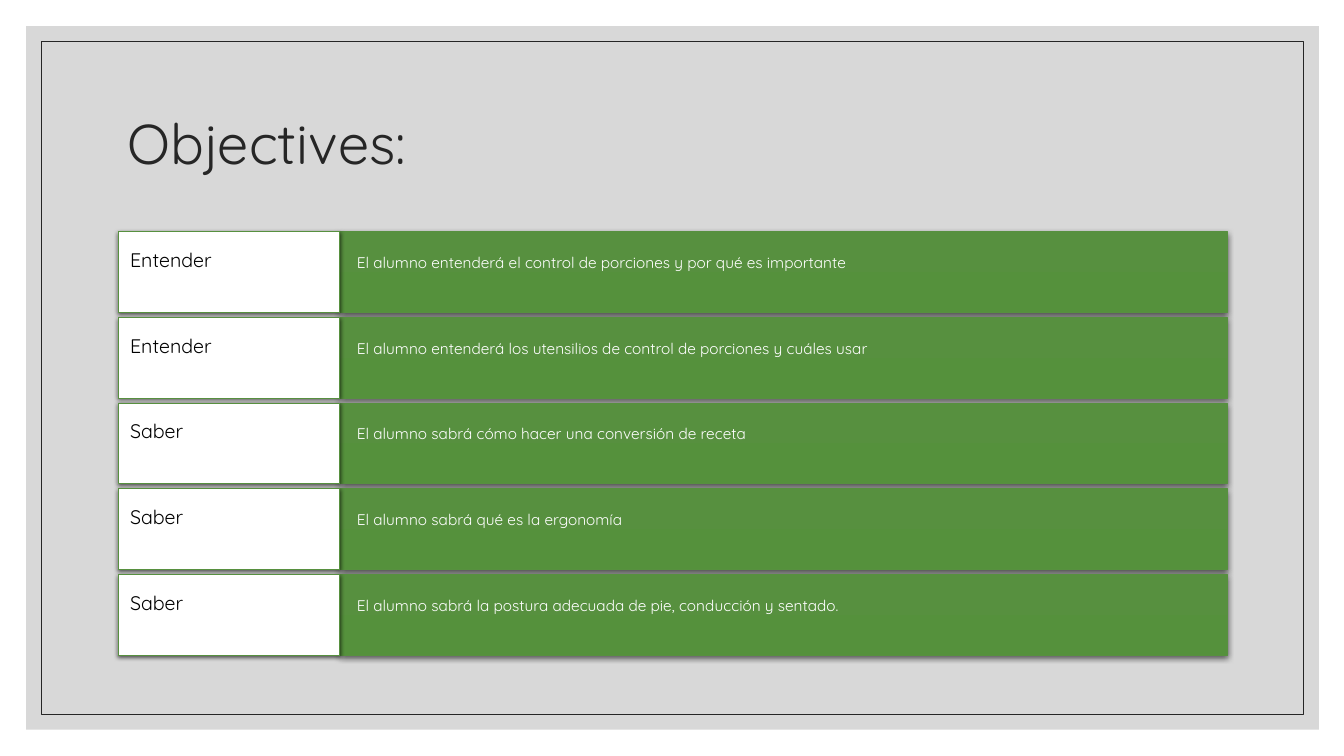
from lxml import etree
from pptx import Presentation
from pptx.dml.color import RGBColor
from pptx.enum import shapes, text
from pptx.oxml import ns
from pptx.util import Inches, Pt

COLORS = {
    "panel": "BFBFBF", "ink": "262626", "white": "FFFFFF", "black": "000000",
    "green": "57903F", "green_end": "55913C",
}
FONT = "Quicksand"
OBJECTIVES = [
    ("Entender", "El alumno entenderá el control de porciones y por qué es importante"),
    ("Entender", "El alumno entenderá los utensilios de control de porciones y cuáles usar"),
    ("Saber", "El alumno sabrá cómo hacer una conversión de receta"),
    ("Saber", "El alumno sabrá qué es la ergonomía"),
    ("Saber", "El alumno sabrá la postura adecuada de pie, conducción y sentado."),
]


def add_rectangle(left, top, width, height, fill=None, line=None, shadow=None):
    shape = slide.shapes.add_shape(
        shapes.MSO_SHAPE.RECTANGLE, *map(Inches, (left, top, width, height)))
    shape.shadow.inherit = False
    if fill:
        shape.fill.solid()
        shape.fill.fore_color.rgb = RGBColor.from_string(COLORS[fill])
    else:
        shape.fill.background()
    if line:
        shape.line.color.rgb = RGBColor.from_string(COLORS[line])
        shape.line.width = Pt(0.5)
    else:
        shape.line.fill.background()
    if shadow:
        blur, distance = shadow
        effects = shape._element.spPr.find(ns.qn("a:effectLst"))
        outer = etree.SubElement(effects, ns.qn("a:outerShdw"), blurRad=str(Pt(blur)),
                                 dist=str(Pt(distance)), dir="5400000", rotWithShape="0")
        color = etree.SubElement(outer, ns.qn("a:srgbClr"), val=COLORS["black"])
        etree.SubElement(color, ns.qn("a:alpha"), val="63000")
    return shape


def write_text(shape, wording, size, color, insets):
    frame = shape.text_frame
    left, top, right, bottom = map(Inches, insets)
    frame_format = {
        "word_wrap": True, "vertical_anchor": text.MSO_ANCHOR.MIDDLE,
        "margin_left": left, "margin_top": top,
        "margin_right": right, "margin_bottom": bottom,
    }
    for name, value in frame_format.items():
        setattr(frame, name, value)
    paragraph = frame.paragraphs[0]
    paragraph.text = wording
    paragraph.alignment = text.PP_ALIGN.LEFT
    paragraph.line_spacing = 0.9
    for name, value in {"name": FONT, "size": Pt(size)}.items():
        setattr(paragraph.font, name, value)
    paragraph.font.color.rgb = RGBColor.from_string(COLORS[color])


presentation = Presentation()
presentation.slide_width, presentation.slide_height = Inches(13.33), Inches(7.5)
slide = presentation.slides.add_slide(presentation.slide_layouts[6])

# Translucent panel and thin frame
panel = add_rectangle(0.26, 0.26, 12.82, 6.98, fill="panel")
panel_color = panel._element.spPr.find(".//" + ns.qn("a:srgbClr"))
etree.SubElement(panel_color, ns.qn("a:alpha"), val="60000")
add_rectangle(0.41, 0.41, 12.52, 6.68, line="ink")

# Title
title = slide.shapes.add_textbox(*map(Inches, (1.17, 0.7, 11, 1.5)))
write_text(title, "Objectives:", 40, "ink", (0.1, 0.05, 0.1, 0.05))

# Objective rows: green bar with a white label; deeper bottom insets lift the text
ROW_TOP, ROW_PITCH, ROW_HEIGHT = 2.3, 0.85, 0.8
LABEL_LEFT, LABEL_WIDTH, BAR_WIDTH = 1.17, 2.2, 8.8
for index, (verb, objective) in enumerate(OBJECTIVES):
    top = ROW_TOP + index * ROW_PITCH
    bar = add_rectangle(LABEL_LEFT + LABEL_WIDTH, top, BAR_WIDTH, ROW_HEIGHT,
                        line="green", shadow=(4.5, 1.5))
    bar.fill.gradient()
    bar.fill.gradient_angle = 270
    for stop, color in zip(bar.fill.gradient_stops, ("green", "green_end")):
        stop.color.rgb = RGBColor.from_string(COLORS[color])
    write_text(bar, objective, 11, "white", (0.17, 0.2, 0.17, 0.37))

    label = add_rectangle(LABEL_LEFT, top, LABEL_WIDTH, ROW_HEIGHT,
                          fill="white", line="green", shadow=(3, 1))
    write_text(label, verb, 14, "black", (0.12, 0.08, 0.12, 0.3))

presentation.save("out.pptx")
